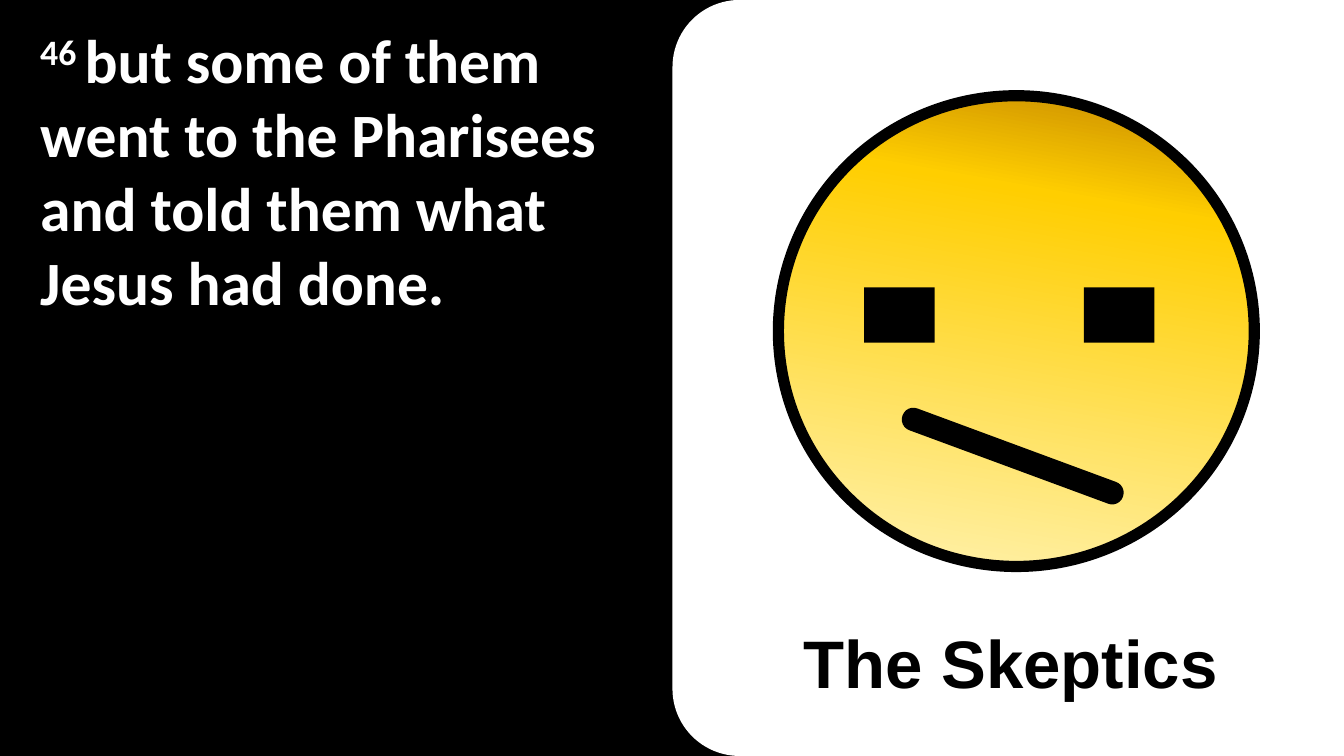
from copy import deepcopy
from dataclasses import dataclass

from pptx import Presentation
from pptx.dml.color import RGBColor
from pptx.enum.shapes import MSO_SHAPE
from pptx.enum.text import MSO_ANCHOR, PP_ALIGN
from pptx.oxml.ns import qn
from pptx.util import Inches, Pt

RECTANGLE = MSO_SHAPE.RECTANGLE
ROUNDED = MSO_SHAPE.ROUNDED_RECTANGLE
OVAL = MSO_SHAPE.OVAL
LEFT = PP_ALIGN.LEFT
TOP = MSO_ANCHOR.TOP


@dataclass(frozen=True)
class Theme:
    black: RGBColor = RGBColor(0x00, 0x00, 0x00)
    white: RGBColor = RGBColor(0xFF, 0xFF, 0xFF)
    face_stops: tuple = ((0, "C48700"), (0.24, "FFCE00"), (1, "FFF2AF"))
    verse_font: str = "Calibri"
    caption_font: str = "Arial"
    verse_size: Pt = Pt(44)
    caption_size: Pt = Pt(48)
    face_line: Pt = Pt(8)


THEME = Theme()


def add_block(parent, kind, left, top, width, height, color):
    """Add a plain filled shape to a page or group."""
    block = parent.add_shape(kind, Inches(left), Inches(top), Inches(width), Inches(height))
    block.shadow.inherit = False
    block.fill.solid()
    block.fill.fore_color.rgb = color
    block.line.fill.background()
    return block


def fill_gradient(shape, stops, angle):
    """Fill with any number of (position, colour) stops; angle runs counter-clockwise."""
    shape.fill.gradient()
    shape.fill.gradient_angle = angle
    stop_list = shape.element.spPr.find(qn("a:gradFill")).find(qn("a:gsLst"))
    while len(stop_list) < len(stops):
        stop_list.append(deepcopy(stop_list[0]))
    for stop, (position, color) in zip(shape.fill.gradient_stops, stops):
        stop.position = position
        stop.color.rgb = RGBColor.from_string(color)


def add_text(page, left, top, width, height):
    """Add a wrapping text box and return its first paragraph."""
    box = page.shapes.add_textbox(Inches(left), Inches(top), Inches(width), Inches(height))
    box.text_frame.word_wrap = True
    box.text_frame.vertical_anchor = TOP
    para = box.text_frame.paragraphs[0]
    para.alignment = LEFT
    return para


def add_span(para, text, font, size, color):
    span = para.add_run()
    span.text = text
    span.font.name = font
    span.font.size = size
    span.font.bold = True
    span.font.color.rgb = color
    return span


def add_verse(page, number, words):
    para = add_text(page, 0.3, 0.17, 6.01, 3.06)
    style = (THEME.verse_font, THEME.verse_size, THEME.white)
    number_span = add_span(para, number, *style)
    number_span.font._element.set("baseline", "30000")
    add_span(para, words, *style)


def add_caption(page, words):
    para = add_text(page, 7.87, 6.21, 5.18, 0.96)
    para.line_spacing = 0.9
    add_span(para, words, THEME.caption_font, THEME.caption_size, THEME.black)


def add_skeptic_face(page):
    face = page.shapes.add_group_shape().shapes
    head = add_block(face, OVAL, 7.72, 0.95, 4.72, 4.67, THEME.white)
    fill_gradient(head, THEME.face_stops, 260)
    head.line.color.rgb = THEME.black
    head.line.width = THEME.face_line
    for eye_left in (8.57, 10.75):
        add_block(face, RECTANGLE, eye_left, 2.85, 0.7, 0.55, THEME.black)
    mouth = add_block(face, ROUNDED, 8.88, 4.41, 2.33, 0.23, THEME.black)
    mouth.adjustments[0] = 0.49
    mouth.rotation = 20.3


def main():
    deck = Presentation()
    deck.slide_width, deck.slide_height = Inches(13.33), Inches(7.5)
    page = deck.slides.add_slide(deck.slide_layouts[6])
    page.background.fill.solid()
    page.background.fill.fore_color.rgb = THEME.black

    panel = add_block(page.shapes, ROUNDED, 6.67, 0, 6.66, 7.5, THEME.white)
    panel.adjustments[0] = 0.1
    add_block(page.shapes, RECTANGLE, 11.59, 0, 1.74, 7.5, THEME.white)

    add_verse(page, "46\u00a0".replace("\u00a0", " "),
              "but some of them went to the Pharisees and told them what Jesus had done.")
    add_caption(page, "The Skeptics")
    add_skeptic_face(page)
    deck.save("out.pptx")


if __name__ == "__main__":
    main()
